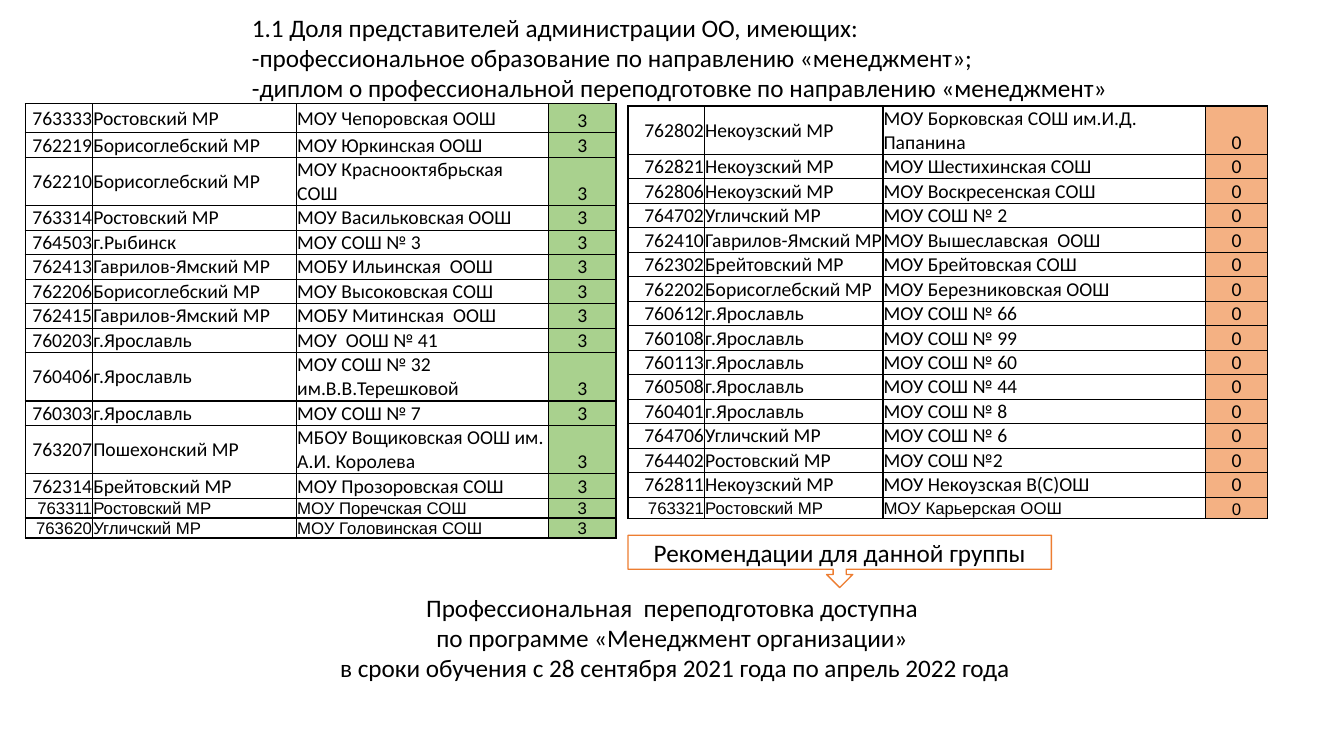
from lxml import etree
from pptx import Presentation
from pptx.dml.color import RGBColor
from pptx.enum.shapes import MSO_SHAPE as Shape
from pptx.enum.text import MSO_ANCHOR as Anchor, PP_ALIGN as Align
from pptx.oxml.ns import qn
from pptx.util import Pt


def color(value):
    return RGBColor.from_string(value)


def write(frame, text, size=18, font="Calibri", align=Align.LEFT):
    frame.word_wrap = True
    for index, line in enumerate(text.split("\n")):
        paragraph = frame.add_paragraph() if index else frame.paragraphs[0]
        paragraph.alignment = align
        run = paragraph.add_run()
        run.text = line
        run.font.size = Pt(size)
        run.font.name = font
        run.font.color.rgb = color("000000")


green_schools = [
    ("763333", "Ростовский МР", "МОУ Чепоровская ООШ"),
    ("762219", "Борисоглебский МР", "МОУ Юркинская ООШ"),
    ("762210", "Борисоглебский МР", "МОУ Краснооктябрьская СОШ"),
    ("763314", "Ростовский МР", "МОУ Васильковская ООШ"),
    ("764503", "г.Рыбинск", "МОУ СОШ № 3"),
    ("762413", "Гаврилов-Ямский МР", "МОБУ Ильинская  ООШ"),
    ("762206", "Борисоглебский МР", "МОУ Высоковская СОШ"),
    ("762415", "Гаврилов-Ямский МР", "МОБУ Митинская  ООШ"),
    ("760203", "г.Ярославль", "МОУ  ООШ № 41"),
    ("760406", "г.Ярославль", "МОУ СОШ № 32 им.В.В.Терешковой"),
    ("760303", "г.Ярославль", "МОУ СОШ № 7"),
    ("763207", "Пошехонский МР", "МБОУ Вощиковская ООШ им. А.И. Королева"),
    ("762314", "Брейтовский МР", "МОУ Прозоровская СОШ"),
    ("763311", "Ростовский МР", "МОУ Поречская СОШ"),
    ("763620", "Угличский МР", "МОУ Головинская СОШ"),
]
orange_schools = [
    ("762802", "Некоузский МР", "МОУ Борковская СОШ им.И.Д. Папанина"),
    ("762821", "Некоузский МР", "МОУ Шестихинская СОШ"),
    ("762806", "Некоузский МР", "МОУ Воскресенская СОШ"),
    ("764702", "Угличский МР", "МОУ СОШ № 2"),
    ("762410", "Гаврилов-Ямский МР", "МОУ Вышеславская  ООШ"),
    ("762302", "Брейтовский МР", "МОУ Брейтовская СОШ"),
    ("762202", "Борисоглебский МР", "МОУ Березниковская ООШ"),
    ("760612", "г.Ярославль", "МОУ СОШ № 66"),
    ("760108", "г.Ярославль", "МОУ СОШ № 99"),
    ("760113", "г.Ярославль", "МОУ СОШ № 60"),
    ("760508", "г.Ярославль", "МОУ СОШ № 44"),
    ("760401", "г.Ярославль", "МОУ СОШ № 8"),
    ("764706", "Угличский МР", "МОУ СОШ № 6"),
    ("764402", "Ростовский МР", "МОУ СОШ №2"),
    ("762811", "Некоузский МР", "МОУ Некоузская В(С)ОШ"),
    ("763321", "Ростовский МР", "МОУ Карьерская ООШ"),
]

presentation = Presentation()
presentation.slide_width = Pt(960)
presentation.slide_height = Pt(540)
slide = presentation.slides.add_slide(presentation.slide_layouts[6])

school_tables = [
    (green_schools, "3", "A9D18E", 2, 18, 74.2, 292.3, (48.2, 145.7, 180, 48.2), 20.7, 14.2),
    (orange_schools, "0", "F4B183", 1, 448.6, 75.7, 291.6, (54.7, 127.4, 230.4, 44.4), 10.1, 10.1),
]
aligns = [Align.RIGHT, Align.LEFT, Align.LEFT, Align.CENTER]
for schools, score, fill, small_rows, left, top, height, widths, first_height, row_height in school_tables:
    shape = slide.shapes.add_table(len(schools), 4, Pt(left), Pt(top), Pt(sum(widths)), Pt(height))
    table = shape.table
    table.first_row = False
    table.horz_banding = False
    for column, width in zip(table.columns, widths):
        column.width = Pt(width)
    for row_index, school in enumerate(schools):
        table.rows[row_index].height = Pt(row_height if row_index else first_height)
        small = row_index >= len(schools) - small_rows
        for column_index, text in enumerate((*school, score)):
            cell = table.cell(row_index, column_index)
            cell.margin_left = cell.margin_top = cell.margin_right = Pt(0.45)
            cell.margin_bottom = 0
            is_score = column_index == 3
            cell.vertical_anchor = Anchor.BOTTOM if is_score else Anchor.MIDDLE
            write(cell.text_frame, text, size=12 if small else 14,
                  font="Arial" if small else "Calibri", align=aligns[column_index])
            properties = cell._tc.get_or_add_tcPr()
            for side in ("a:lnL", "a:lnR", "a:lnT", "a:lnB"):
                border = etree.SubElement(properties, qn(side), w=str(Pt(1)))
                border_fill = etree.SubElement(border, qn("a:solidFill"))
                etree.SubElement(border_fill, qn("a:srgbClr"), val="000000")
            if is_score:
                cell.fill.solid()
                cell.fill.fore_color.rgb = color(fill)
            else:
                cell.fill.background()
    if schools is orange_schools:
        table.rows[len(schools) - 1].height = Pt(15.4)
    shape.height = Pt(height)

title = slide.shapes.add_textbox(Pt(172.8), Pt(5), Pt(653), Pt(72.7))
write(title.text_frame, "1.1 Доля представителей администрации ОО, имеющих:\n"
      "-профессиональное образование по направлению «менеджмент»;\n"
      "-диплом о профессиональной переподготовке по направлению «менеджмент»")

training = slide.shapes.add_textbox(Pt(229), Pt(419.2), Pt(506.2), Pt(72.7))
write(training.text_frame, "Профессиональная  переподготовка доступна \n"
      "по программе «Менеджмент организации» \n"
      "в сроки обучения с 28 сентября 2021 года по апрель 2022 года", align=Align.CENTER)

callout = slide.shapes.add_shape(Shape.DOWN_ARROW_CALLOUT, Pt(448.6), Pt(382.3), Pt(302.4), Pt(37.4))
callout.shadow.inherit = False
callout.fill.solid()
callout.fill.fore_color.rgb = color("FFFFFF")
callout.line.color.rgb = color("ED7D31")
callout.line.width = Pt(1)
callout.text_frame.vertical_anchor = Anchor.MIDDLE
write(callout.text_frame, "Рекомендации для данной группы", align=Align.CENTER)

presentation.save("out.pptx")
